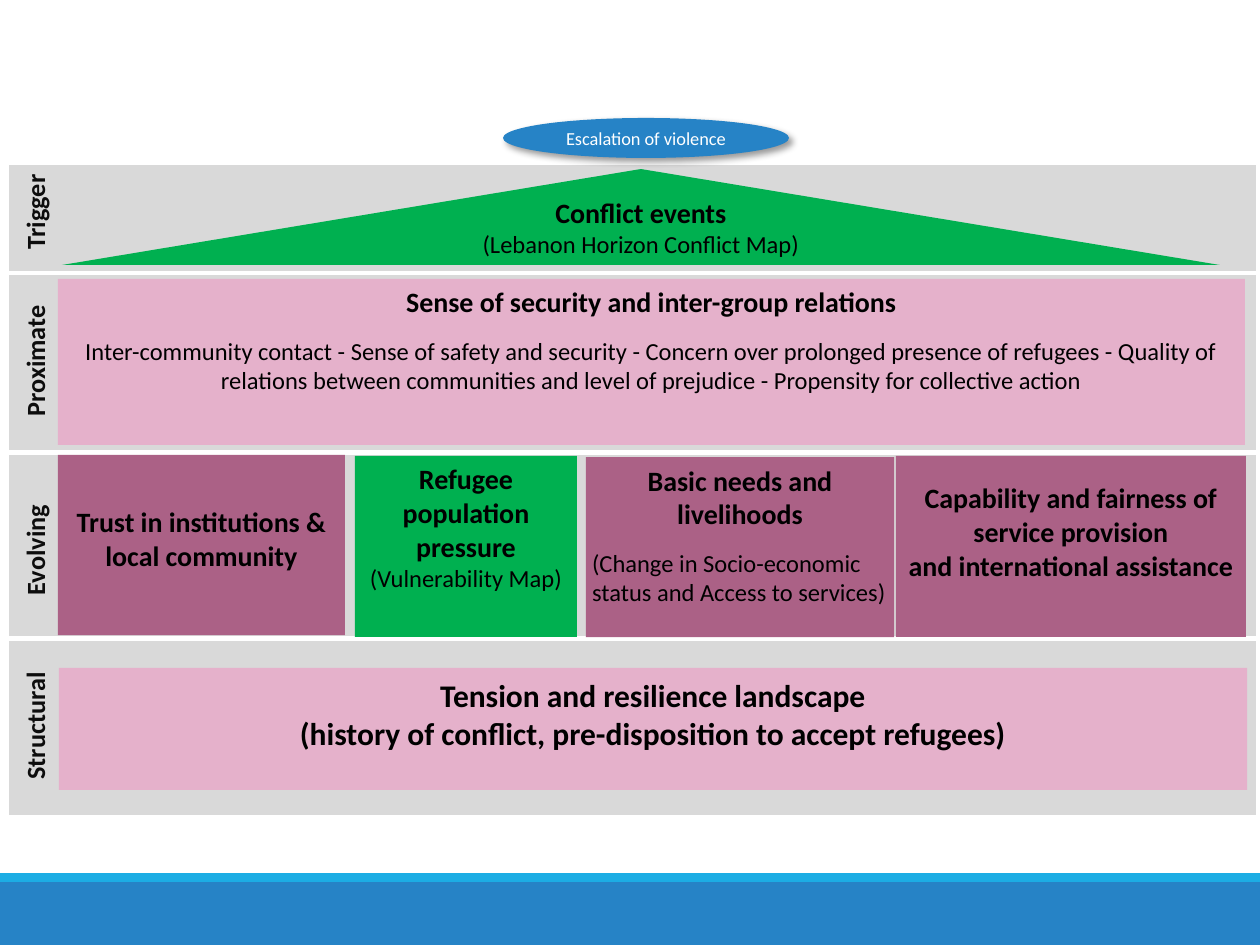
from lxml import etree
from pptx import Presentation
from pptx import util as u
from pptx.dml.color import RGBColor
from pptx.enum import shapes, text
from pptx.oxml import ns

SCALE = 914400 / 126
GREY, GREEN, PINK, PLUM, BLUE = "D9D9D9", "00B050", "E5B1CB", "AB6186", "2683C6"
KIND = shapes.MSO_SHAPE


def px(n):
    return u.Emu(round(n * SCALE))


def draw(kind, box, fill, lines=(), top=6, bottom=6, anchor=text.MSO_ANCHOR.TOP):
    part = slide.shapes.add_shape(kind, *map(px, box)) if kind else slide.shapes.add_textbox(*map(px, box))
    if kind:
        part.shadow.inherit = False
        part.fill.solid()
        part.fill.fore_color.rgb = RGBColor.from_string(fill)
        part.line.fill.background()
    frame = part.text_frame
    frame.word_wrap = True
    frame.vertical_anchor = anchor
    frame.margin_left = frame.margin_right = 0
    frame.margin_top, frame.margin_bottom = px(top), px(bottom)
    for i, (words, size, bold, color, before) in enumerate(lines):
        paragraph = frame.paragraphs[0] if i == 0 else frame.add_paragraph()
        paragraph.alignment = text.PP_ALIGN.CENTER
        paragraph.space_before = u.Pt(before)
        paragraph.font.name = "Calibri"
        paragraph.font.size = u.Pt(size)
        paragraph.font.bold = bold
        paragraph.font.color.rgb = RGBColor.from_string(color)
        paragraph.add_run().text = words
    return part


deck = Presentation()
deck.slide_width, deck.slide_height = px(1260), px(945)
slide = deck.slides.add_slide(deck.slide_layouts[6])

draw(KIND.RECTANGLE, (0, 882, 1260, 63), BLUE)
draw(KIND.RECTANGLE, (0, 873, 1260, 9), "1CADE4")

levels = [
    ("Trigger", 165, 106, 212),
    ("Proximate", 275, 175, 361),
    ("Evolving", 455, 181, 550),
    ("Structural", 641, 174, 726),
]
for name, y, height, middle in levels:
    draw(KIND.FLOWCHART_PROCESS, (9, y, 1247, height), GREY)
    label = draw(None, (-37, middle - 22, 144, 44), None, [(name, 15, True, "0D0D0D", 0)])
    label.rotation = 270

factors = [
    ((58, 279, 1187, 166), PINK, 6, [
        ("Sense of security and inter-group relations", 16, True, 0),
        ("Inter-community contact - Sense of safety and security - Concern over prolonged presence "
         "of refugees - Quality of relations between communities and level of prejudice - "
         "Propensity for collective action", 14, False, 10)]),
    ((58, 455, 287, 180), PLUM, 50, [("Trust in institutions & local community", 16, True, 0)]),
    ((355, 456, 222, 181), GREEN, 6, [
        ("Refugee population pressure", 16, True, 0),
        ("(Vulnerability Map)", 14, False, 0)]),
    ((586, 457, 308, 180), PLUM, 6, [
        ("Basic needs and livelihoods", 16, True, 0),
        ("(Change in Socio-economic status and Access to services)", 14, False, 10)]),
    ((896, 456, 350, 181), PLUM, 25, [
        ("Capability and fairness of service provision", 16, True, 0),
        ("and international assistance", 16, True, 0)]),
    ((59, 668, 1188, 122), PINK, 8, [
        ("Tension and resilience landscape", 18, True, 0),
        ("(history of conflict, pre-disposition to accept refugees)", 18, True, 0)]),
]
for box, fill, top, lines in factors:
    lines = [(words, size, bold, "000000", before) for words, size, bold, before in lines]
    block = draw(KIND.ROUNDED_RECTANGLE, box, fill, lines, top)
    block.adjustments[0] = 0
    if lines[-1][0].startswith("(Change"):
        change = block.text_frame.paragraphs[-1]
        change.alignment = text.PP_ALIGN.LEFT
        change._p.get_or_add_pPr().set("marL", str(px(6)))

events = draw(KIND.ISOSCELES_TRIANGLE, (62, 169, 1158, 96), GREEN, [
    ("Conflict events", 16, True, "000000", 0),
    ("(Lebanon Horizon Conflict Map)", 14, False, "000000", 0),
], 0, 28, text.MSO_ANCHOR.MIDDLE)
events.adjustments[0] = 0.5

violence = draw(KIND.OVAL, (503, 118, 286, 40), BLUE,
                [("Escalation of violence", 10.5, False, "FFFFFF", 0)],
                anchor=text.MSO_ANCHOR.MIDDLE)
effects = violence._element.spPr.find(ns.qn("a:effectLst"))
shadow = etree.SubElement(effects, ns.qn("a:outerShdw"), blurRad=str(u.Pt(4)),
                          dist=str(u.Pt(3)), dir="2700000", algn="tl", rotWithShape="0")
shade = etree.SubElement(shadow, ns.qn("a:srgbClr"), val="000000")
etree.SubElement(shade, ns.qn("a:alpha"), val="40000")

deck.save("out.pptx")
